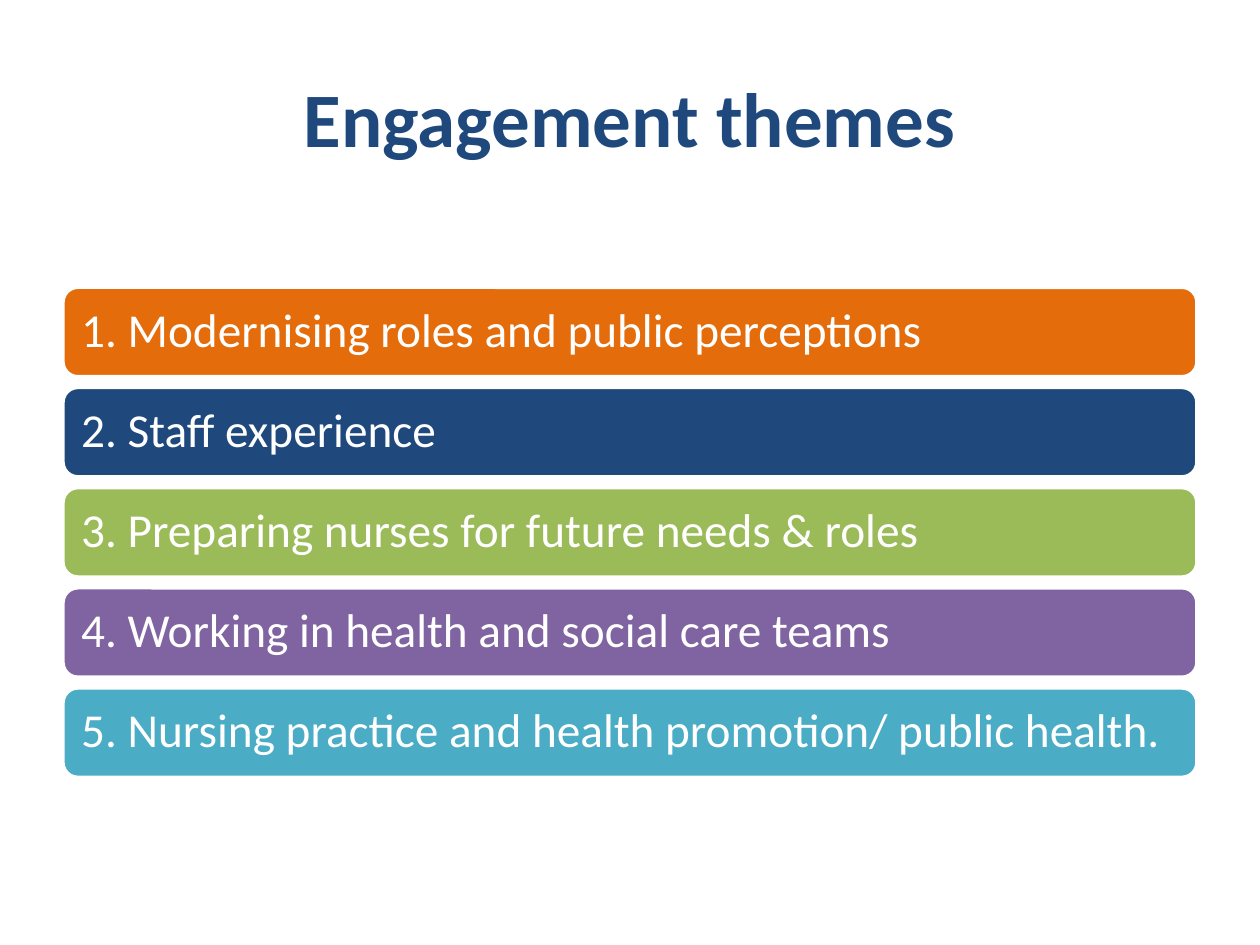
import pptx
import pptx.util
import pptx.dml.color
import pptx.enum.shapes
import pptx.enum.text

Inches = pptx.util.Inches
Align = pptx.enum.text.PP_ALIGN


def color(hex_string):
    return pptx.dml.color.RGBColor.from_string(hex_string)


def write(shape, text, size, ink, bold=False, align=Align.LEFT, spacing=1.0, inset=0.1):
    frame = shape.text_frame
    frame.word_wrap = True
    frame.vertical_anchor = pptx.enum.text.MSO_ANCHOR.MIDDLE
    frame.margin_left = frame.margin_right = Inches(inset)
    frame.margin_top = frame.margin_bottom = Inches(inset)
    paragraph = frame.paragraphs[0]
    paragraph.alignment = align
    paragraph.line_spacing = spacing
    run = paragraph.add_run()
    run.text = text
    run.font.name = "Calibri"
    run.font.size = pptx.util.Pt(size)
    run.font.bold = bold
    run.font.color.rgb = color(ink)


deck = pptx.Presentation()
deck.slide_width, deck.slide_height = Inches(10), Inches(7.5)
slide = deck.slides.add_slide(deck.slide_layouts[6])

# One column between equal side margins
left = deck.slide_width * 0.05
width = deck.slide_width - 2 * left

# Heading
heading = slide.shapes.add_textbox(int(left), Inches(0.3), int(width), Inches(1.25))
write(heading, "Engagement themes", size=44, ink="1F497D", bold=True, align=Align.CENTER)

# Stack of theme bars
themes = [
    ("1. Modernising roles and public perceptions", "E46C0A"),
    ("2. Staff experience", "1F497D"),
    ("3. Preparing nurses for future needs & roles", "9BBB59"),
    ("4. Working in health and social care teams", "8064A2"),
    ("5. Nursing practice and health promotion/ public health.", "4BACC6"),
]
first_top, bar_height, gap = Inches(2.28), Inches(0.71), Inches(0.08)
row_step = bar_height + gap + Inches(0.01) // 2

for row, (theme, fill) in enumerate(themes):
    bar = slide.shapes.add_shape(
        pptx.enum.shapes.MSO_SHAPE.ROUNDED_RECTANGLE,
        int(left), first_top + row * row_step, int(width), bar_height)
    bar.shadow.inherit = False
    bar.fill.solid()
    bar.fill.fore_color.rgb = color(fill)
    bar.line.color.rgb = color("FFFFFF")
    bar.line.width = pptx.util.Pt(2)
    write(bar, theme, size=27, ink="FFFFFF", spacing=0.9, inset=0.11)

deck.save("out.pptx")
